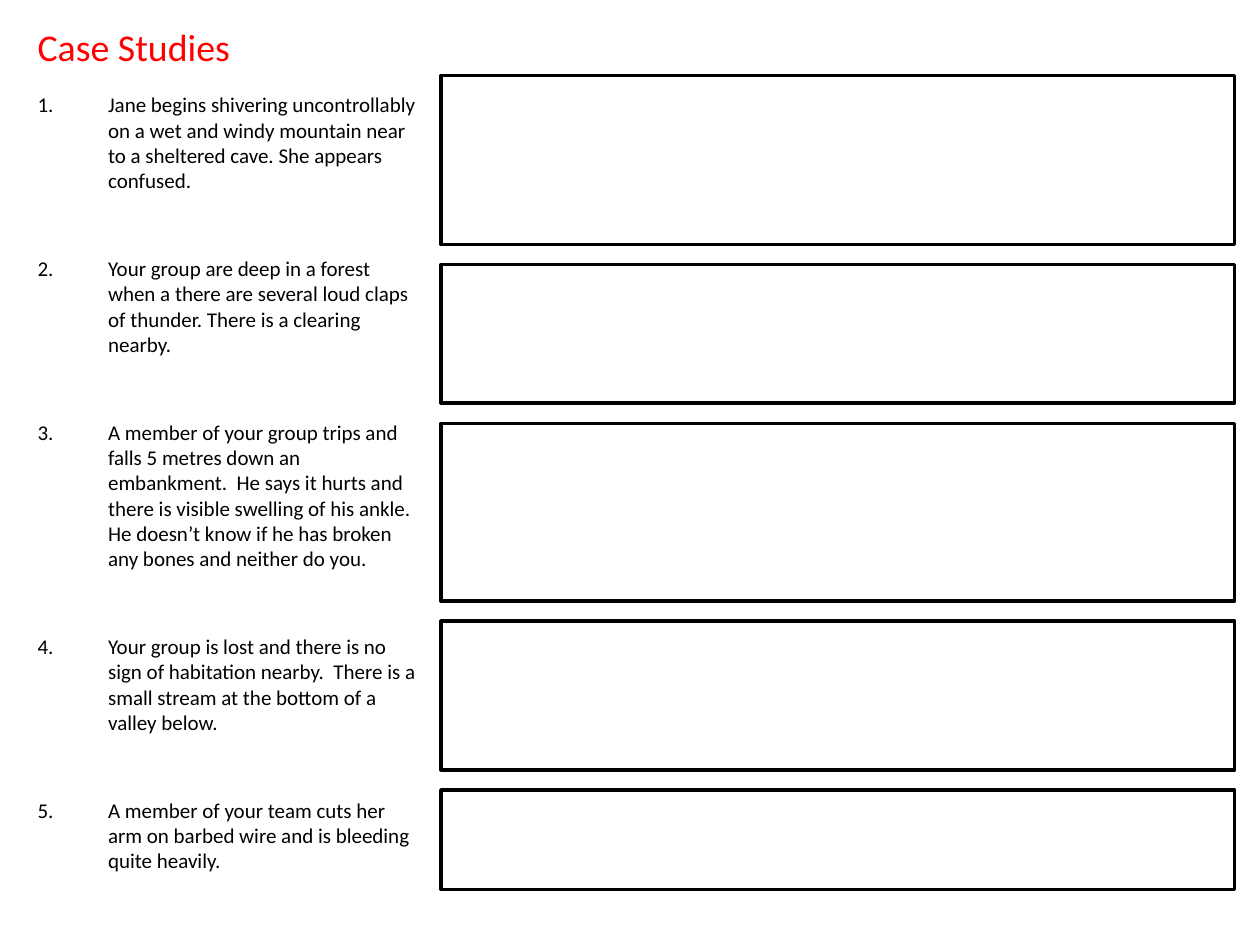
from lxml import etree
from pptx import Presentation
from pptx.dml.color import RGBColor
from pptx.enum.shapes import MSO_SHAPE
from pptx.enum.text import MSO_ANCHOR, PP_ALIGN
from pptx.oxml.ns import qn
from pptx.util import Inches, Pt

RECTANGLE = MSO_SHAPE.RECTANGLE
MIDDLE, TOP = MSO_ANCHOR.MIDDLE, MSO_ANCHOR.TOP
LEFT = PP_ALIGN.LEFT

COLORS = {"title": "FF0000", "ink": "000000", "paper": "FFFFFF"}
FONT = "Calibri"
MARGIN = 0.2
ANSWER_LEFT, ANSWER_TOP, ANSWER_WIDTH, ANSWER_GAP = 3.5, 0.6, 6.3, 0.16
NUMBER_INDENT = Inches(0.56)

# Each case study with the height of its answer box
CASES = [
    ("Jane begins shivering uncontrollably on a wet and windy mountain near "
     "to a sheltered cave. She appears confused.", 1.34),
    ("Your group are deep in a forest when a there are several loud claps of "
     "thunder. There is a clearing nearby.", 1.1),
    ("A member of your group trips and falls 5 metres down an embankment.  "
     "He says it hurts and there is visible swelling of his ankle.  He doesn’t "
     "know if he has broken any bones and neither do you.", 1.41),
    ("Your group is lost and there is no sign of habitation nearby.  There is "
     "a small stream at the bottom of a valley below.", 1.18),
    ("A member of your team cuts her arm on barbed wire and is bleeding quite "
     "heavily.", 0.79),
]

prs = Presentation()
prs.slide_width, prs.slide_height = Inches(10), Inches(7.5)
slide = prs.slides.add_slide(prs.slide_layouts[6])


def add_text_frame(top, width, height, anchor):
    frame = slide.shapes.add_textbox(
        Inches(MARGIN), Inches(top), Inches(width), Inches(height)).text_frame
    frame.word_wrap = True
    frame.vertical_anchor = anchor
    return frame


def add_run(paragraph, text, size, color):
    paragraph.alignment = LEFT
    run = paragraph.add_run()
    run.text = text
    run.font.name = FONT
    run.font.size = Pt(size)
    run.font.color.rgb = RGBColor.from_string(COLORS[color])


title = add_text_frame(0.13, 1.81, 0.47, MIDDLE)
add_run(title.paragraphs[0], "Case Studies", 21.6, "title")

studies = add_text_frame(0.68, 3.23, 6.61, TOP)
answer_top = ANSWER_TOP
for number, (study, answer_height) in enumerate(CASES):
    paragraph = studies.add_paragraph() if number else studies.paragraphs[0]
    paragraph.line_spacing = Pt(14.4)
    paragraph.space_after = Pt(36)
    add_run(paragraph, study, 12, "ink")
    properties = paragraph._p.get_or_add_pPr()
    properties.set("marL", str(NUMBER_INDENT))
    properties.set("indent", str(-NUMBER_INDENT))
    etree.SubElement(properties, qn("a:buAutoNum"), type="arabicPeriod")

    answer = slide.shapes.add_shape(
        RECTANGLE, Inches(ANSWER_LEFT), Inches(answer_top),
        Inches(ANSWER_WIDTH), Inches(answer_height))
    answer.shadow.inherit = False
    answer.fill.solid()
    answer.fill.fore_color.rgb = RGBColor.from_string(COLORS["paper"])
    answer.line.color.rgb = RGBColor.from_string(COLORS["ink"])
    answer.line.width = Pt(2)
    answer_top += answer_height + ANSWER_GAP

prs.save("out.pptx")
